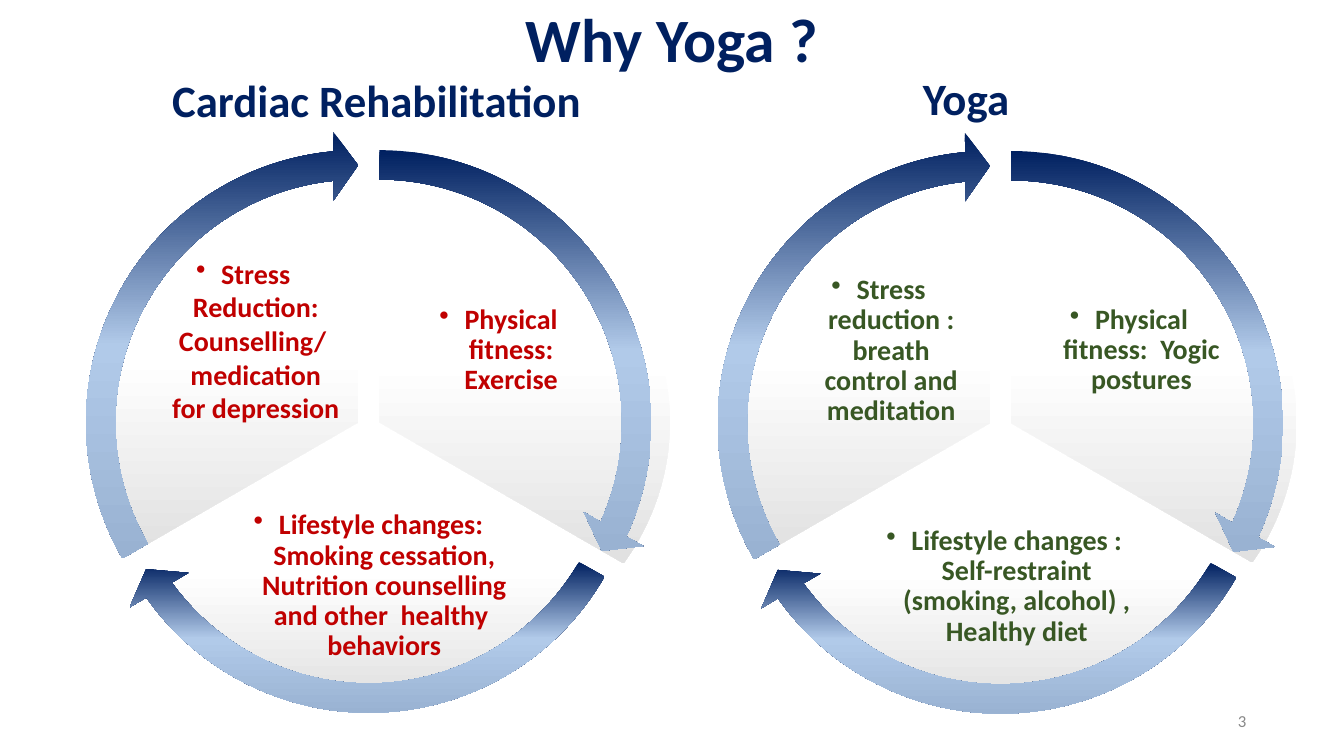
import copy
import math
from dataclasses import dataclass

import pptx
import pptx.dml.color
import pptx.enum.text
import pptx.oxml.ns
import pptx.util
from lxml import etree

COLORS = {
    "navy": "002060", "sky": "B1CAE9", "steel": "99B2D2", "white": "FFFFFF",
    "silver": "E1E1E1", "red": "C00000", "green": "385724", "gray": "888888",
}
ARROW_GRADIENT = ("navy", "sky", "steel")
SECTOR_GRADIENT = ("white", "white", "silver")

# The page is a grid of 160 columns and 90 rows of square cells
COLUMNS, ROWS = 160, 90
CELL = pptx.util.Inches(7.5) / ROWS
DRAWING_UNITS = 1000  # outline units per cell

# Wheel geometry, in cells and degrees
GAP = 1.45
SWEEP = 120
SECTOR_RADIUS = 31
OUTER, INNER = 32.4, 28.9
BARB_OUT, TIP, BARB_IN = 34.7, 30.6, 26.6

Point = tuple[float, float]
Frame = tuple[float, float, float, float]
Segment = tuple[Point, ...]  # one point for a line, three for a curve


@dataclass(frozen=True)
class Slice:
    text: str
    frame: Frame
    start: int
    radius_x: float = SECTOR_RADIUS
    line_spacing: float = 0.9


@dataclass(frozen=True)
class Wheel:
    heading: str
    heading_frame: Frame
    center: Point
    color: str
    slices: tuple[Slice, ...]


WHEELS = (
    Wheel("Cardiac Rehabilitation", (11, 4.9, 67.7, 10.8), (43.9, 51), "red", (
        Slice("Physical fitness: Exercise", (47, 36, 24.7, 11.4), -90, 34.6),
        Slice("Lifestyle changes:  Smoking cessation, Nutrition counselling "
              "and other  healthy  behaviors", (27.7, 57.2, 33.1, 25.2), 30),
        Slice("Stress Reduction: Counselling/  medication for depression",
              (17, 28.7, 23.9, 23.6), 150, line_spacing=1.0),
    )),
    Wheel("Yoga", (81, 4.7, 68, 10.8), (119.1, 51.1), "green", (
        Slice("Physical fitness:  Yogic postures",
              (122.3, 34.3, 24.2, 14.9), -90, 34),
        Slice("Lifestyle changes : Self-restraint (smoking, alcohol) , "
              "Healthy diet", (101.8, 62.4, 35.5, 14.9), 30, 33.1),
        Slice("Stress reduction : breath control and meditation",
              (93.1, 32.6, 23, 18.4), 150),
    )),
)


def cells(count: float) -> pptx.util.Emu:
    return pptx.util.Emu(round(count * CELL))


def polar(center: Point, angle: float, radius: float) -> Point:
    turn = math.radians(angle)
    return (center[0] + radius * math.cos(turn),
            center[1] + radius * math.sin(turn))


def arc(center: Point, start: float, end: float, radius_x: float,
        radius_y: float, pieces: int = 4) -> list[Segment]:
    """Arc as a first point followed by cubic curves."""
    knots = []
    for piece in range(pieces + 1):
        angle = math.radians(start + (end - start) * piece / pieces)
        knots.append(math.atan2(math.sin(angle) / radius_y,
                                math.cos(angle) / radius_x))

    def spot(knot: float, pull: float = 0) -> Point:
        cosine, sine = math.cos(knot), math.sin(knot)
        return (center[0] + radius_x * (cosine - pull * sine),
                center[1] + radius_y * (sine + pull * cosine))

    segments: list[Segment] = [(spot(knots[0]),)]
    for first, last in zip(knots, knots[1:]):
        pull = 4 / 3 * math.tan(math.remainder(last - first, math.tau) / 4)
        segments.append((spot(first, pull), spot(last, -pull), spot(last)))
    return segments


def sector_outline(hub: Point, part: Slice) -> list[Segment]:
    return [(hub,)] + arc(hub, part.start, part.start + SWEEP,
                          part.radius_x, SECTOR_RADIUS)


def arrow_outline(hub: Point, start: float) -> list[Segment]:
    head = [(polar(hub, start + turn, radius),) for turn, radius in
            ((115.1, BARB_OUT), (SWEEP, TIP), (113.7, BARB_IN))]
    return (arc(hub, start, start + 114.8, OUTER, OUTER) + head
            + arc(hub, start + 114.2, start, INNER, INNER))


def bend(shape, segments: list[Segment]) -> None:
    """Turn each run of three lines that stands for a curve into one."""
    lines = iter(shape._element.findall(".//" + pptx.oxml.ns.qn("a:lnTo")))
    for segment in segments[1:]:
        run = [next(lines) for _ in segment]
        if len(run) == 3:
            curve = run[0].makeelement(pptx.oxml.ns.qn("a:cubicBezTo"))
            run[0].addprevious(curve)
            for line in run:
                curve.append(line[0])
                line.getparent().remove(line)


def draw_outline(shapes, segments: list[Segment],
                 gradient: tuple[str, ...]) -> None:
    scaled = [(round(x * DRAWING_UNITS), round(y * DRAWING_UNITS))
              for segment in segments for x, y in segment]
    builder = shapes.build_freeform(*scaled[0], scale=CELL / DRAWING_UNITS)
    builder.add_line_segments(scaled[1:], close=True)
    shape = builder.convert_to_shape()
    bend(shape, segments)
    shape.shadow.inherit = False
    shape.line.fill.background()
    shape.fill.gradient()
    shape.fill.gradient_angle = 270
    # A new gradient has two stops; add the third
    stops = shape._element.find(".//" + pptx.oxml.ns.qn("a:gsLst"))
    stops.append(copy.deepcopy(stops[-1]))
    for stop, name, position in zip(shape.fill.gradient_stops, gradient,
                                    (0, 0.5, 1)):
        stop.position = position
        stop.color.rgb = pptx.dml.color.RGBColor.from_string(COLORS[name])


def write(box, text: str, *, size: float, color: str, bold: bool = True,
          align: str = "CENTER", anchor: str = "MIDDLE", inset: float = 0.6,
          line_spacing: float = 0.9, before: float = 0, wrap: bool = True,
          bullet: bool = False) -> None:
    frame = box.text_frame
    frame.word_wrap = wrap
    frame.auto_size = pptx.enum.text.MSO_AUTO_SIZE.NONE
    frame.vertical_anchor = pptx.enum.text.MSO_ANCHOR[anchor]
    frame.margin_left = frame.margin_right = cells(inset)
    frame.margin_top = frame.margin_bottom = cells(inset)
    para = frame.paragraphs[0]
    para.alignment = pptx.enum.text.PP_ALIGN[align]
    para.line_spacing = line_spacing
    para.space_before = pptx.util.Pt(before)
    if bullet:
        properties = para._p.get_or_add_pPr()
        properties.set("marL", str(cells(3)))
        properties.set("indent", str(-cells(3)))
        etree.SubElement(properties, pptx.oxml.ns.qn("a:buChar"), char="•")
    span = para.add_run()
    span.text = text
    span.font.name = "Calibri"
    span.font.size = pptx.util.Pt(size)
    span.font.bold = bold
    span.font.color.rgb = pptx.dml.color.RGBColor.from_string(COLORS[color])


def add_text(shapes, frame: Frame, text: str, **style) -> None:
    write(shapes.add_textbox(*map(cells, frame)), text, **style)


def draw_wheel(page, wheel: Wheel) -> None:
    add_text(page.shapes, wheel.heading_frame, wheel.heading, size=32,
             color="navy", anchor="BOTTOM", before=10)
    group = page.shapes.add_group_shape().shapes
    hubs = [polar(wheel.center, part.start + SWEEP / 2, GAP)
            for part in wheel.slices]
    for hub, part in zip(hubs, wheel.slices):
        draw_outline(group, sector_outline(hub, part), SECTOR_GRADIENT)
        add_text(group, part.frame, part.text, size=20, color=wheel.color,
                 inset=0.36, line_spacing=part.line_spacing, before=8,
                 bullet=True)
    for hub, part in zip(hubs, wheel.slices):
        draw_outline(group, arrow_outline(hub, part.start), ARROW_GRADIENT)


def main() -> None:
    deck = pptx.Presentation()
    deck.slide_width, deck.slide_height = cells(COLUMNS), cells(ROWS)
    page = deck.slides.add_slide(deck.slide_layouts.get_by_name("Title Only"))
    # Title
    title = page.shapes.title
    title.left, title.top, title.width, title.height = map(
        cells, (11, -3.6, 138, 17.4))
    write(title, "Why Yoga ?", size=44, color="navy")
    # Two wheels with their headings
    for wheel in WHEELS:
        draw_wheel(page, wheel)
    # Page number
    add_text(page.shapes, (146.6, 84, 2.4, 3.5), "3", size=12, color="gray",
             bold=False, align="RIGHT", line_spacing=1.0, wrap=False)
    deck.save("out.pptx")


if __name__ == "__main__":
    main()
